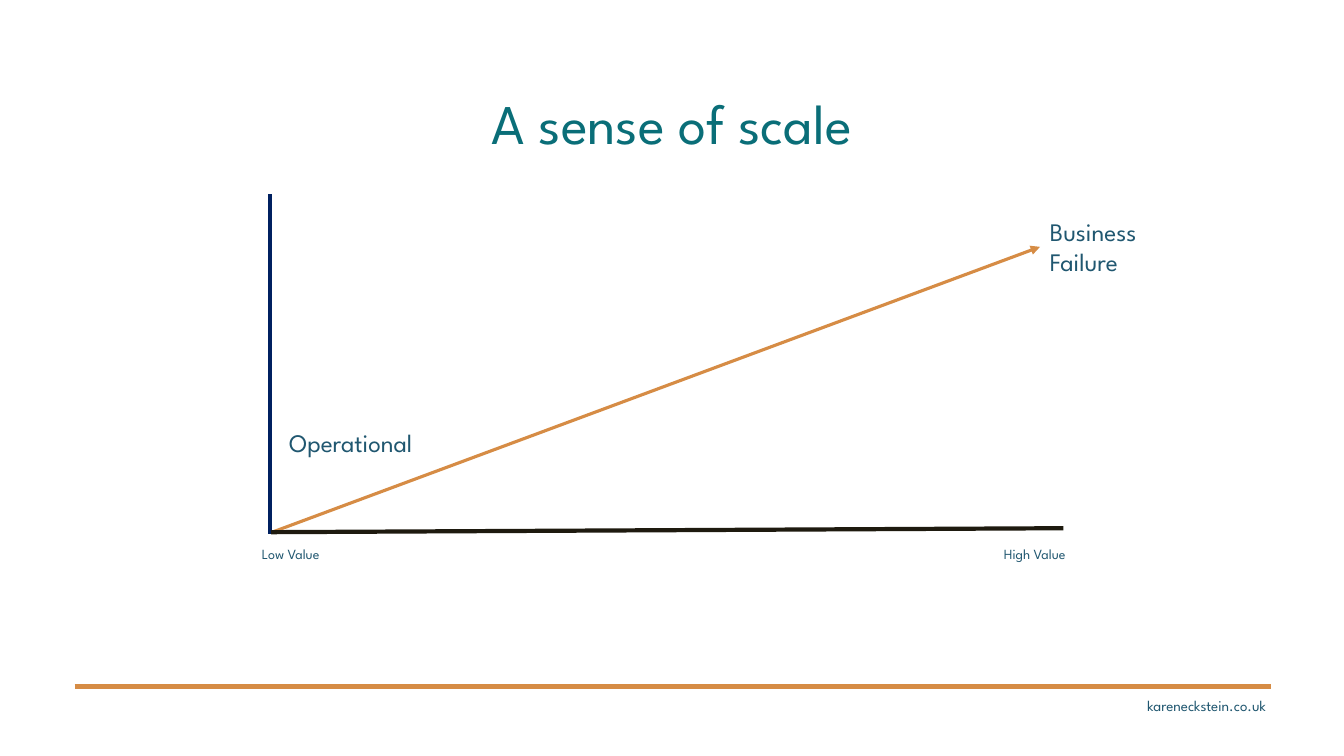
from dataclasses import dataclass

from lxml import etree
from pptx import Presentation
from pptx.dml.color import RGBColor
from pptx.enum.shapes import MSO_CONNECTOR
from pptx.enum.text import MSO_ANCHOR, MSO_AUTO_SIZE, PP_ALIGN
from pptx.oxml.ns import qn
from pptx.slide import Slide
from pptx.util import Cm, Pt

STRAIGHT = MSO_CONNECTOR.STRAIGHT
TOP, BOTTOM = MSO_ANCHOR.TOP, MSO_ANCHOR.BOTTOM
LEFT, CENTER, RIGHT = PP_ALIGN.LEFT, PP_ALIGN.CENTER, PP_ALIGN.RIGHT
NO_FIT, GROW = MSO_AUTO_SIZE.NONE, MSO_AUTO_SIZE.SHAPE_TO_FIT_TEXT


@dataclass(frozen=True)
class Theme:
    font: str = "League Spartan"
    background: str = "FFFFFF"
    title: str = "0A6E78"
    text: str = "205770"
    accent: str = "D68C45"
    vertical_axis: str = "002060"
    horizontal_axis: str = "1E1A0F"
    title_size: float = 40
    label_size: float = 18
    footer_size: float = 10.7
    axis_size: float = 10
    rule_width: float = 3
    trend_width: float = 2.25


THEME = Theme()


@dataclass(frozen=True)
class Line:
    start: tuple[float, float]
    end: tuple[float, float]
    color: str
    width: float = THEME.rule_width
    arrow: bool = False


@dataclass(frozen=True)
class Label:
    text: str
    box: tuple[float, float, float, float]
    size: float
    color: str = THEME.text
    alignment: PP_ALIGN = LEFT
    anchor: MSO_ANCHOR = TOP
    fit: MSO_AUTO_SIZE = GROW
    wrap: bool = True
    line_spacing: float = 1.0


AXIS_LABEL_TOP = 13.61
AXIS_LABEL_SIZE = (2.46, 0.69)

LINES = [
    Line((1.88, 17.3), (32.03, 17.3), THEME.accent),
    Line((6.86, 13.41), (26.21, 6.22), THEME.accent, THEME.trend_width, True),
    Line((6.81, 4.9), (6.81, 13.46), THEME.vertical_axis),
    Line((26.8, 13.31), (6.83, 13.41), THEME.horizontal_axis),
]

LABELS = [
    Label("kareneckstein.co.uk", (27.97, 17.42, 4.19, 0.71), THEME.footer_size,
          alignment=RIGHT, wrap=False),
    Label("A sense of scale", (1.83, 2.84, 30.2, 1.22), THEME.title_size, THEME.title,
          CENTER, BOTTOM, NO_FIT, line_spacing=0.9),
    Label("Business Failure", (26.21, 5.33, 3.63, 1.8), THEME.label_size),
    Label("Operational", (7.04, 10.64, 4.37, 1.02), THEME.label_size),
    Label("Low Value", (5.84, AXIS_LABEL_TOP, *AXIS_LABEL_SIZE), THEME.axis_size,
          alignment=RIGHT),
    Label("High Value", (24.64, AXIS_LABEL_TOP, *AXIS_LABEL_SIZE), THEME.axis_size,
          alignment=RIGHT),
]


def apply_format(target: object, values: dict[str, object]) -> None:
    for name, value in values.items():
        setattr(target, name, value)


def draw_line(slide: Slide, line: Line) -> None:
    ends = [Cm(value) for value in (*line.start, *line.end)]
    connector = slide.shapes.add_connector(STRAIGHT, *ends)
    connector.line.color.rgb = RGBColor.from_string(line.color)
    connector.line.width = Pt(line.width)
    properties = connector.element.spPr
    if line.arrow:
        outline = properties.find(qn("a:ln"))
        etree.SubElement(outline, qn("a:tailEnd"), type="triangle")
    etree.SubElement(properties, qn("a:effectLst"))


def draw_label(slide: Slide, label: Label) -> None:
    shape = slide.shapes.add_textbox(*(Cm(value) for value in label.box))
    apply_format(shape.text_frame, {
        "text": label.text,
        "word_wrap": label.wrap,
        "auto_size": label.fit,
        "vertical_anchor": label.anchor,
    })
    paragraph = shape.text_frame.paragraphs[0]
    apply_format(paragraph, {
        "alignment": label.alignment,
        "line_spacing": label.line_spacing,
    })
    font = paragraph.runs[0].font
    apply_format(font, {"name": THEME.font, "size": Pt(label.size)})
    font.color.rgb = RGBColor.from_string(label.color)


def main() -> None:
    presentation = Presentation()
    apply_format(presentation, {"slide_width": Cm(33.87), "slide_height": Cm(19.05)})
    slide = presentation.slides.add_slide(presentation.slide_layouts[6])
    fill = slide.background.fill
    fill.solid()
    fill.fore_color.rgb = RGBColor.from_string(THEME.background)
    for line in LINES:
        draw_line(slide, line)
    for label in LABELS:
        draw_label(slide, label)
    presentation.save("out.pptx")


if __name__ == "__main__":
    main()
